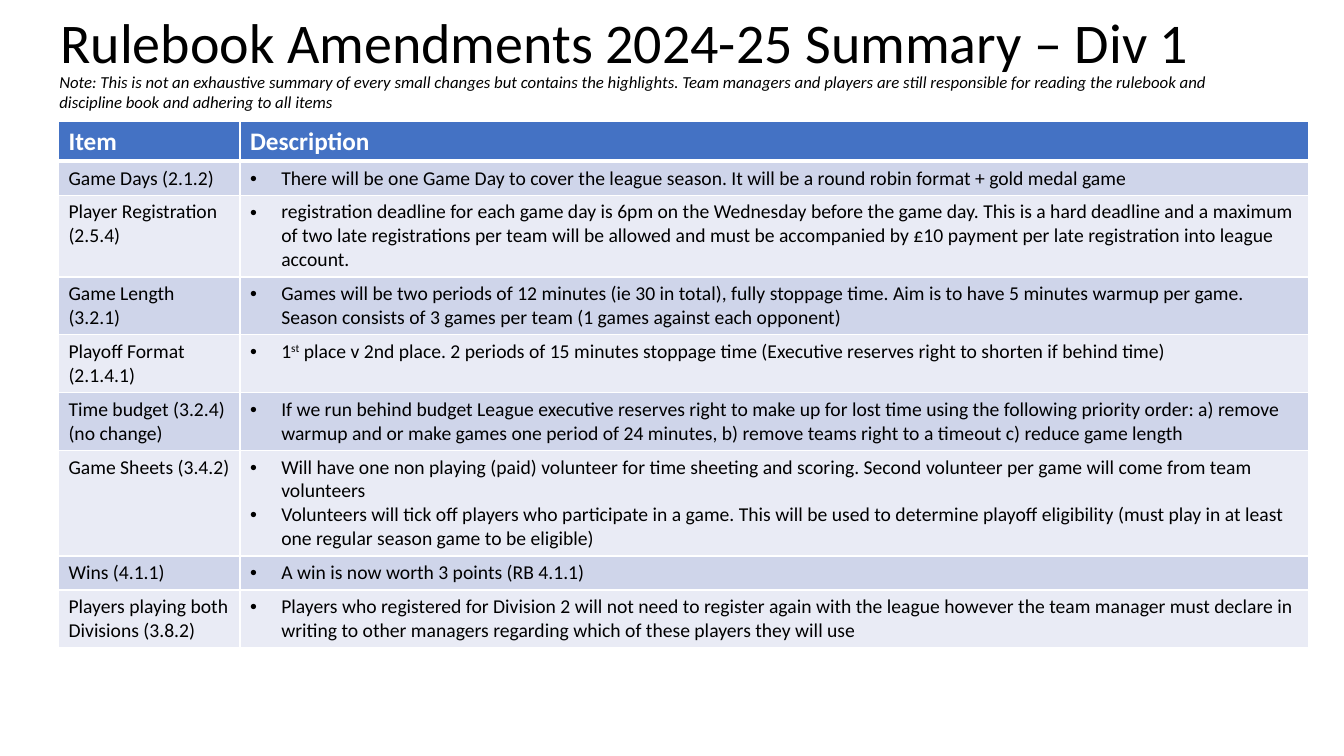
from pptx import Presentation, util as u
from pptx.dml.color import RGBColor
from pptx.enum import text as t
from pptx.oxml import parse_xml
from pptx.oxml.ns import nsdecls

BLACK = RGBColor(0x00, 0x00, 0x00)
WHITE = RGBColor(0xFF, 0xFF, 0xFF)
BLUE = RGBColor(0x44, 0x72, 0xC4)
BANDS = RGBColor(0xCF, 0xD5, 0xEA), RGBColor(0xE9, 0xEB, 0xF5)
FONT = "Calibri"
COLS = 1.8, 10.6
PAD, LINE = 0.1, 0.237  # row height = padding + lines of text
HEAD = 0.4

# Item, lines of text, bullets; ^ marks superscript
RULES = [
    ("Game Days (2.1.2)", 1, [
        "There will be one Game Day to cover the league season. It will be a "
        "round robin format + gold medal game"]),
    ("Player Registration (2.5.4)", 3, [
        "registration deadline for each game day is 6pm on the Wednesday "
        "before the game day. This is a hard deadline and a maximum of two "
        "late registrations per team will be allowed and must be accompanied "
        "by £10 payment per late registration into league account."]),
    ("Game Length (3.2.1)", 2, [
        "Games will be two periods of 12 minutes (ie 30 in total), fully "
        "stoppage time. Aim is to have 5 minutes warmup per game. Season "
        "consists of 3 games per team (1 games against each opponent)"]),
    ("Playoff Format (2.1.4.1)", 2, [
        "1^st^ place v 2nd place. 2 periods of 15 minutes stoppage time "
        "(Executive reserves right to shorten if behind time)"]),
    ("Time budget (3.2.4) (no change)", 2, [
        "If we run behind budget League executive reserves right to make up "
        "for lost time using the following priority order: a) remove warmup "
        "and or make games one period of 24 minutes, b) remove teams right to "
        "a timeout c) reduce game length"]),
    ("Game Sheets (3.4.2)", 4, [
        "Will have one non playing (paid) volunteer for time sheeting and "
        "scoring. Second volunteer per game will come from team volunteers",
        "Volunteers will tick off players who participate in a game. This "
        "will be used to determine playoff eligibility (must play in at least "
        "one regular season game to be eligible)"]),
    ("Wins (4.1.1)", 1, ["A win is now worth 3 points (RB 4.1.1)"]),
    ("Players playing both Divisions (3.8.2)", 2, [
        "Players who registered for Division 2 will not need to register "
        "again with the league however the team manager must declare in "
        "writing to other managers regarding which of these players they "
        "will use"]),
]


def write(frame, *lines, size=14, color=BLACK, bold=False, italic=False,
          bullet=False, space=1.0):
    """Fill a text frame, one paragraph per line."""
    for i, line in enumerate(lines):
        par = frame.add_paragraph() if i else frame.paragraphs[0]
        par.line_spacing = space
        if bullet:
            props = par._p.get_or_add_pPr()
            props.set("marL", str(u.Inches(0.31)))
            props.set("indent", str(u.Inches(-0.31)))
            props.append(parse_xml(
                f'<a:buFont {nsdecls("a")} typeface="Arial"/>'))
            props.append(parse_xml(f'<a:buChar {nsdecls("a")} char="•"/>'))
        for j, part in enumerate(line.split("^")):
            run = par.add_run()
            run.text = part
            font = run.font
            font.name, font.size = FONT, u.Pt(size)
            font.bold, font.italic = bold, italic
            font.color.rgb = color
            if j % 2:
                run._r.get_or_add_rPr().set("baseline", "30000")


def label(slide, box, words, anchor=t.MSO_ANCHOR.TOP, **style):
    frame = slide.shapes.add_textbox(*map(u.Inches, box)).text_frame
    frame.word_wrap = True
    frame.vertical_anchor = anchor
    write(frame, words, **style)


def paint(cell, fill, base=1):
    """White borders, then the fill."""
    props = cell._tc.get_or_add_tcPr()
    for side, width in zip("LRTB", (1, 1, 1, base)):
        props.append(parse_xml(
            f'<a:ln{side} {nsdecls("a")} w="{u.Pt(width)}"><a:solidFill>'
            f'<a:srgbClr val="{WHITE}"/></a:solidFill></a:ln{side}>'))
    cell.fill.solid()
    cell.fill.fore_color.rgb = fill


def rules(slide, left, top):
    highs = [HEAD] + [PAD + LINE * count for _, count, _ in RULES]
    box = left, top, sum(COLS), sum(highs)
    table = slide.shapes.add_table(
        len(highs), len(COLS), *map(u.Inches, box)).table
    for col, width in zip(table.columns, COLS):
        col.width = u.Inches(width)
    for row, high in zip(table.rows, highs):
        row.height = u.Inches(high)

    # Header row
    for cell, name in zip(table.rows[0].cells, ("Item", "Description")):
        paint(cell, BLUE, base=3)
        write(cell.text_frame, name, size=18, color=WHITE, bold=True)

    # Banded rows
    for i, (item, _, points) in enumerate(RULES):
        left_cell, right_cell = table.rows[i + 1].cells
        for cell in (left_cell, right_cell):
            paint(cell, BANDS[i % 2])
        write(left_cell.text_frame, item)
        write(right_cell.text_frame, *points, bullet=True)


def main():
    deck = Presentation()
    deck.slide_width, deck.slide_height = u.Inches(13.33), u.Inches(7.5)
    slide = deck.slides.add_slide(deck.slide_layouts[6])

    # Title, table and note
    label(slide, (0.5, 0.12, 12.21, 0.68),
          "Rulebook Amendments 2024-25 Summary – Div 1",
          anchor=t.MSO_ANCHOR.BOTTOM, size=40, space=0.9)
    rules(slide, 0.58, 1.2)
    label(slide, (0.49, 0.66, 11.8, 0.5),
          "Note: This is not an exhaustive summary of every small changes but "
          "contains the highlights. Team managers and players are still "
          "responsible for reading the rulebook and discipline book and "
          "adhering to all items", size=12, italic=True)
    deck.save("out.pptx")


if __name__ == "__main__":
    main()
